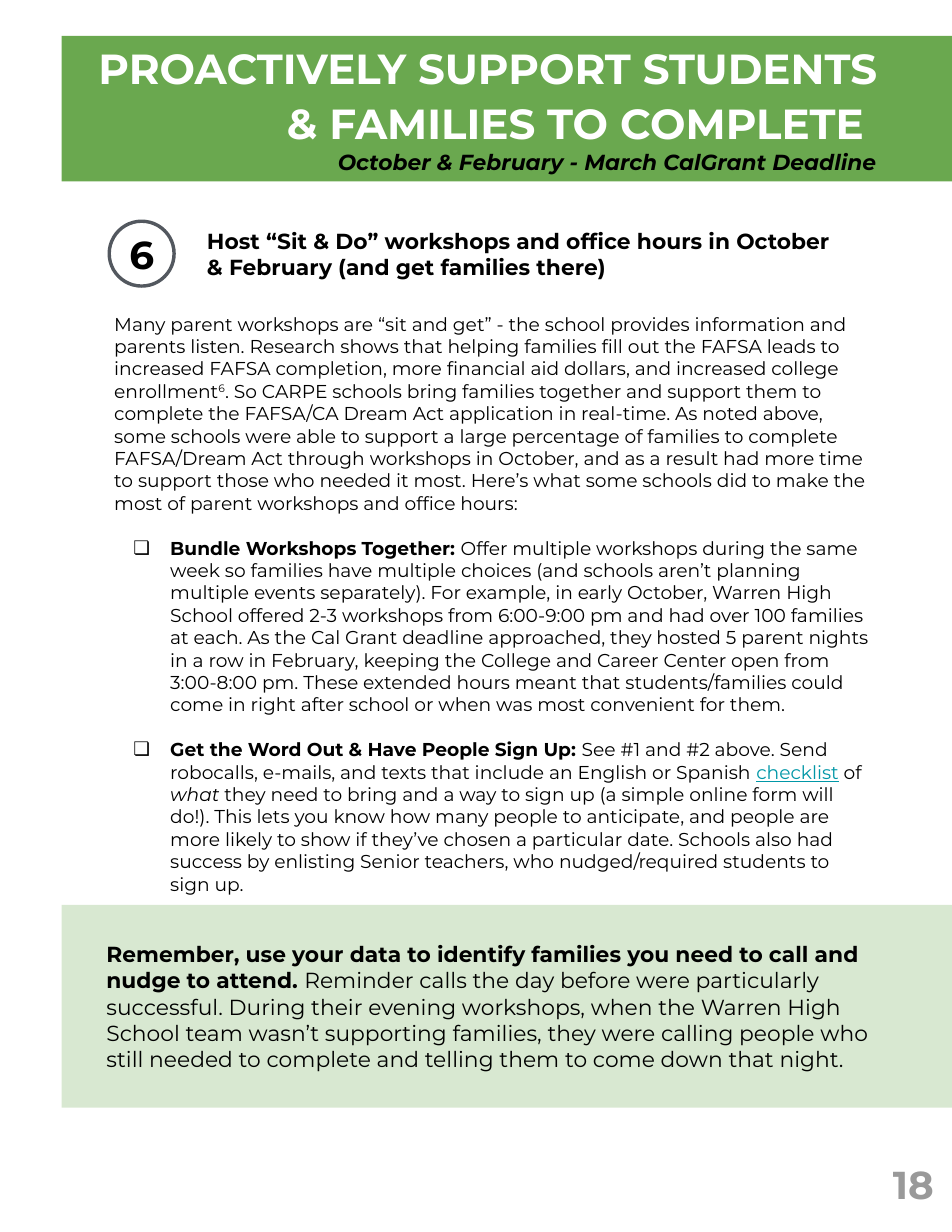
from lxml import etree
from pptx import Presentation, util as u
from pptx.dml.color import RGBColor
from pptx.enum import shapes, text
from pptx.oxml.ns import qn

GREEN, BLACK, WHITE, GRAY, SLATE, TEAL = "6AA84F", "000000", "FFFFFF", "999999", "53585F", "0097A7"


def write(paragraph, content, size=12, color=BLACK, bold=False, italic=False, underline=False, baseline=None):
    run = paragraph.add_run()
    run.text = content
    font = run.font
    font.name, font.size = "Montserrat", u.Pt(size)
    font.bold, font.italic, font.underline = bold, italic, underline
    font.color.rgb = RGBColor.from_string(color)
    if baseline:
        run._r.get_or_add_rPr().set("baseline", str(baseline * 1000))


def arrange(shape, box, insets=(0.1, 0.1, 0.1, 0.1), fill=None, anchor=text.MSO_ANCHOR.MIDDLE):
    shape.left, shape.top, shape.width, shape.height = [u.Inches(value) for value in box]
    if fill:
        shape.fill.solid()
        shape.fill.fore_color.rgb = RGBColor.from_string(fill)
        shape.line.fill.background()
        shape.shadow.inherit = False
    frame = shape.text_frame
    frame.word_wrap = True
    frame.auto_size = text.MSO_AUTO_SIZE.NONE
    frame.vertical_anchor = anchor
    frame.margin_left, frame.margin_top, frame.margin_right, frame.margin_bottom = [
        u.Inches(value) for value in insets
    ]
    return frame


presentation = Presentation()
presentation.slide_width, presentation.slide_height = u.Inches(8.5), u.Inches(11)
slide = presentation.slides.add_slide(presentation.slide_layouts[1])
title, body = slide.placeholders

banner = arrange(title, (0.55, 0.32, 7.95, 1.3), (0.1, 0.1, 0.67, 0.1), GREEN)
heading, dates = banner.paragraphs[0], banner.add_paragraph()
heading.alignment = dates.alignment = text.PP_ALIGN.RIGHT
write(heading, "PROACTIVELY SUPPORT STUDENTS & FAMILIES TO COMPLETE", size=27, color=WHITE, bold=True)
write(heading, " ", size=30, color=WHITE, bold=True)
write(dates, "October & February - March CalGrant Deadline", size=14, bold=True, italic=True)

body_paragraphs = [
    [
        ("Many parent workshops are “sit and get” - the school provides information and parents listen. "
         "Research shows that helping families fill out the FAFSA leads to increased FAFSA completion, more "
         "financial aid dollars, and increased college enrollment", {}),
        ("6", {"baseline": 30}),
        (". So CARPE schools bring families together and support them to complete the FAFSA/CA Dream Act "
         "application in real-time. As noted above, some schools were able to support a large percentage of "
         "families to complete FAFSA/Dream Act through workshops in October, and as a result had more time to "
         "support those who needed it most. Here’s what some schools did to make the most of parent workshops "
         "and office hours:", {}),
    ],
    [
        ("Bundle Workshops Together: ", {"bold": True}),
        ("Offer multiple workshops during the same week so families have multiple choices (and schools aren’t "
         "planning multiple events separately). For example, in early October, Warren High School offered 2-3 "
         "workshops from 6:00-9:00 pm and had over 100 families at each. As the Cal Grant deadline approached, "
         "they hosted 5 parent nights in a row in February, keeping the College and Career Center open from "
         "3:00-8:00 pm. These extended hours meant that students/families could come in right after school or "
         "when was most convenient for them.", {}),
    ],
    [
        ("Get the Word Out & Have People Sign Up: ", {"bold": True}),
        ("See #1 and #2 above. Send robocalls, e-mails, and texts that include an English or Spanish ", {}),
        ("checklist", {"color": TEAL, "underline": True}),
        (" of ", {}),
        ("what", {"italic": True}),
        (" they need to bring and a way to sign up (a simple online form will do!). This lets you know how many "
         "people to anticipate, and people are more likely to show if they’ve chosen a particular date. Schools "
         "also had success by enlisting Senior teachers, who nudged/required students to sign up.", {}),
    ],
]
frame = arrange(body, (0.92, 2.69, 6.95, 5.39), anchor=text.MSO_ANCHOR.TOP)
for index, runs in enumerate(body_paragraphs):
    paragraph = frame.add_paragraph() if index else frame.paragraphs[0]
    paragraph.space_before = u.Pt(14.4 if index else 0)
    properties = paragraph._p.get_or_add_pPr()
    properties.set("marL", str(u.Inches(0.5 if index else 0)))
    properties.set("indent", str(u.Inches(-0.33 if index else 0)))
    if index:
        etree.SubElement(properties, qn("a:buChar")).set("char", "❏")
    else:
        etree.SubElement(properties, qn("a:buNone"))
    for content, style in runs:
        write(paragraph, content, **style)

reminder = slide.shapes.add_shape(shapes.MSO_SHAPE.RECTANGLE, 0, 0, 0, 0)
paragraph = arrange(reminder, (0.55, 8.08, 7.95, 1.81), (0.4, 0.1, 0.5, 0.1), GREEN).paragraphs[0]
fill_color = reminder._element.spPr.find(qn("a:solidFill")).find(qn("a:srgbClr"))
etree.SubElement(fill_color, qn("a:alpha")).set("val", "26000")
paragraph.alignment = text.PP_ALIGN.LEFT
write(paragraph, "Remember, use your data to identify families you need to call and nudge to attend. ", size=14, bold=True)
write(
    paragraph,
    "Reminder calls the day before were particularly successful. During their evening workshops, when the Warren "
    "High School team wasn’t supporting families, they were calling people who still needed to complete and "
    "telling them to come down that night.",
    size=14,
)

step_heading = slide.shapes.add_textbox(0, 0, 0, 0)
paragraph = arrange(step_heading, (1.75, 1.84, 6.06, 0.85), (0.1, 0.1, 0.3, 0.1)).paragraphs[0]
write(
    paragraph,
    "Host “Sit & Do” workshops and office hours in October & February (and get families there)",
    size=14,
    bold=True,
)

badge = slide.shapes.add_group_shape()
ring = badge.shapes.add_shape(shapes.MSO_SHAPE.DONUT, 0, 0, 0, 0)
arrange(ring, (0.96, 1.96, 0.61, 0.61), fill=SLATE)
ring.adjustments[0] = 0.05

for parent, box, number, color in [
    (badge, (0.92, 1.84, 0.69, 0.85), "6", BLACK),
    (slide, (7.81, 10.15, 0.69, 0.85), "18", GRAY),
]:
    label = parent.shapes.add_textbox(0, 0, 0, 0)
    paragraph = arrange(label, box).paragraphs[0]
    paragraph.alignment = text.PP_ALIGN.CENTER
    write(paragraph, number, size=25, color=color, bold=True)

badge.left, badge.top, badge.width, badge.height = [u.Inches(value) for value in (0.92, 1.84, 0.69, 0.85)]
extents = badge._element.grpSpPr.find(qn("a:xfrm"))
for tag, names, values in [("a:chOff", "xy", (0.92, 1.84)), ("a:chExt", ("cx", "cy"), (0.69, 0.85))]:
    for name, value in zip(names, values):
        extents.find(qn(tag)).set(name, str(u.Inches(value)))

presentation.save("out.pptx")
